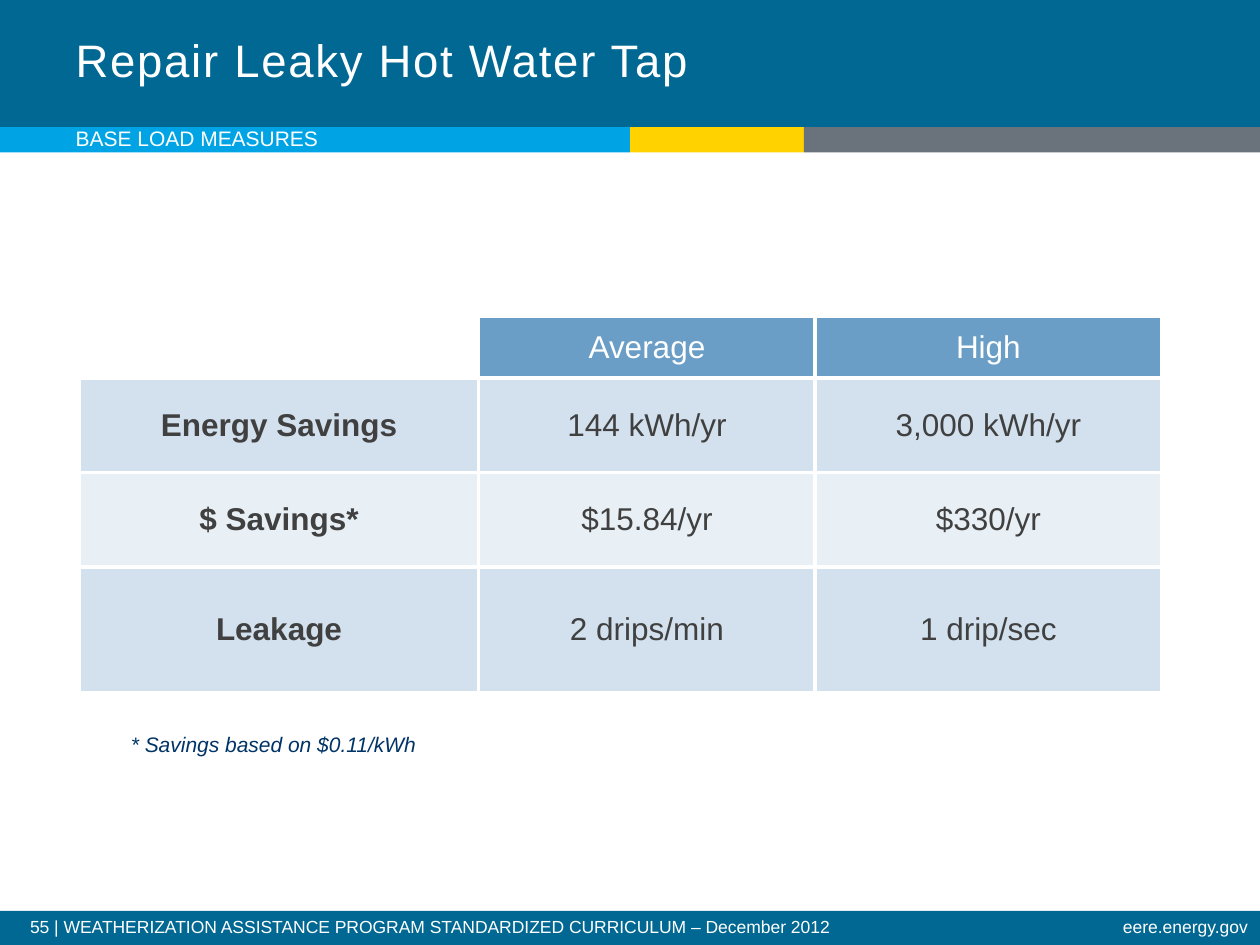
from lxml import etree
from pptx import Presentation
from pptx.dml.color import RGBColor
from pptx.enum import shapes, text
from pptx.oxml import ns
from pptx.util import Inches, Pt

COLORS = {
    "teal": "006892",
    "sky": "00A4E4",
    "yellow": "FFD200",
    "gray": "6A737B",
    "steel": "6B9EC6",
    "charcoal": "404040",
    "navy": "003366",
    "white": "FFFFFF",
}
SAVINGS = [
    ["", "Average", "High"],
    ["Energy Savings", "144 kWh/yr", "3,000 kWh/yr"],
    ["$ Savings*", "$15.84/yr", "$330/yr"],
    ["Leakage", "2 drips/min", "1 drip/sec"],
]
COLUMN_WIDTHS = [3.17, 2.67, 2.75]
ROW_HEIGHTS = [0.49, 0.75, 0.75, 1]
ROW_OPACITY = [100, 30, 15, 30]


def rgb(color):
    return RGBColor.from_string(COLORS[color])


def write(paragraph, wording, size, color, bold=False, italic=False):
    run = paragraph.add_run()
    run.text = wording
    font = run.font
    font.name = "Arial"
    font.size = Pt(size)
    font.color.rgb = rgb(color)
    font.bold = bold
    font.italic = italic
    return run


def add_band(slide, left, top, width, height, color):
    band = slide.shapes.add_shape(
        shapes.MSO_SHAPE.RECTANGLE, *map(Inches, (left, top, width, height)))
    band.shadow.inherit = False
    band.fill.solid()
    band.fill.fore_color.rgb = rgb(color)
    band.line.fill.background()


def add_label(slide, box, wording, size, color, wrap=True, italic=False):
    label = slide.shapes.add_textbox(*map(Inches, box))
    frame = label.text_frame
    frame.word_wrap = wrap
    write(frame.paragraphs[0], wording, size, color, italic=italic)
    return frame


def add_footer(slide, left, width, wording, alignment):
    footer = add_label(slide, (left, 7.24, width, 0.26), wording, 10, "white")
    footer.paragraphs[0].alignment = alignment
    footer.paragraphs[0].line_spacing = 0.9


def set_title(slide, wording):
    title = slide.shapes.title
    title.left, title.top, title.width, title.height = map(
        Inches, (0.5, 0, 5.89, 0.99))
    frame = title.text_frame
    frame.word_wrap = True
    frame.vertical_anchor = text.MSO_ANCHOR.MIDDLE
    heading = frame.paragraphs[0]
    heading.alignment = text.PP_ALIGN.LEFT
    heading.line_spacing = Pt(28)
    run = write(heading, wording, 26, "white")
    run.font._element.set("spc", "100")
    slide.shapes._spTree.append(title._element)


def add_borders(cell):
    properties = cell._tc.get_or_add_tcPr()
    for position, side in enumerate(("lnL", "lnR", "lnT", "lnB")):
        border = etree.Element(ns.qn(f"a:{side}"), w=str(Pt(2.25)))
        fill = etree.SubElement(border, ns.qn("a:solidFill"))
        etree.SubElement(fill, ns.qn("a:srgbClr"), val=COLORS["white"])
        properties.insert(position, border)


def fill_cell(cell, opacity):
    cell.fill.solid()
    cell.fill.fore_color.rgb = rgb("steel")
    if opacity < 100:
        tint = cell._tc.tcPr.find(".//" + ns.qn("a:srgbClr"))
        etree.SubElement(tint, ns.qn("a:alpha"), val=str(opacity * 1000))


def add_savings_table(slide):
    frame = slide.shapes.add_table(
        len(SAVINGS), len(COLUMN_WIDTHS), Inches(0.63), Inches(2.51),
        Inches(sum(COLUMN_WIDTHS)), Inches(sum(ROW_HEIGHTS)))
    table = frame.table
    table.first_row = False
    table.horz_banding = False
    for column, width in zip(table.columns, COLUMN_WIDTHS):
        column.width = Inches(width)
    for row, height in zip(table.rows, ROW_HEIGHTS):
        row.height = Inches(height)
    for r, wordings in enumerate(SAVINGS):
        for c, wording in enumerate(wordings):
            cell = table.cell(r, c)
            cell.vertical_anchor = text.MSO_ANCHOR.MIDDLE
            if wording:
                fill_cell(cell, ROW_OPACITY[r])
                paragraph = cell.text_frame.paragraphs[0]
                paragraph.alignment = text.PP_ALIGN.CENTER
                write(paragraph, wording, 18,
                      "charcoal" if r else "white", bold=c == 0)
            else:
                cell.fill.background()
            add_borders(cell)


def main():
    deck = Presentation()
    deck.slide_width, deck.slide_height = Inches(10), Inches(7.5)
    slide = deck.slides.add_slide(deck.slide_layouts[5])

    add_band(slide, 0, 0, 10, 1.01, "teal")
    add_band(slide, 0, 7.23, 10, 0.27, "teal")
    left = 0
    for width, color in ((5, "sky"), (1.38, "yellow"), (3.62, "gray")):
        add_band(slide, left, 1.01, width, 0.2, color)
        left += width

    add_footer(slide, 0.14, 7.97,
               "55 | WEATHERIZATION ASSISTANCE PROGRAM STANDARDIZED "
               "CURRICULUM – December 2012", text.PP_ALIGN.LEFT)
    add_footer(slide, 5.99, 4.01, "eere.energy.gov", text.PP_ALIGN.RIGHT)

    set_title(slide, "Repair Leaky Hot Water Tap")
    add_savings_table(slide)
    add_label(slide, (0.94, 5.76, 2.53, 0.3), "* Savings based on $0.11/kWh",
              12, "navy", wrap=False, italic=True)

    section = add_label(slide, (0.6, 0.97, 6.92, 0.25),
                        "BASE LOAD MEASURES", 12, "white")
    section.vertical_anchor = text.MSO_ANCHOR.MIDDLE
    section.margin_left = section.margin_right = 0
    section.margin_top = section.margin_bottom = 0

    deck.save("out.pptx")


if __name__ == "__main__":
    main()
